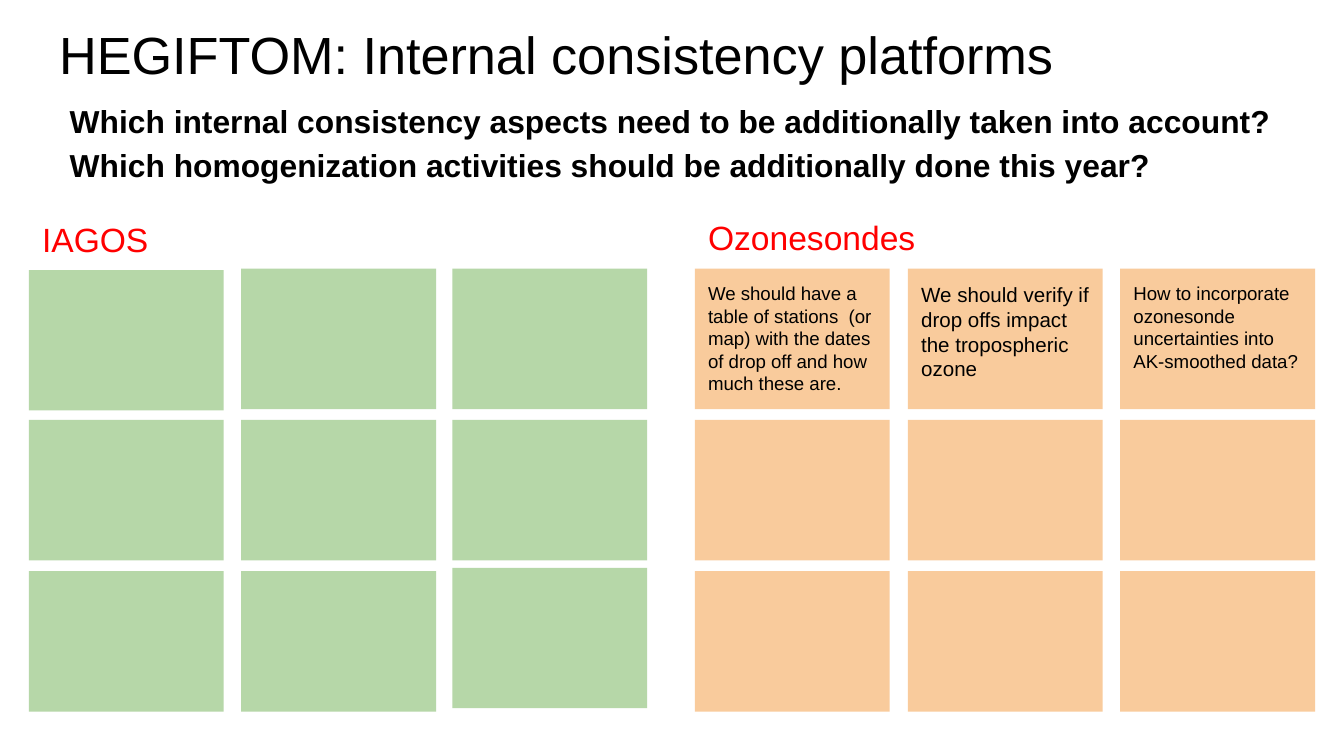
import dataclasses

import pptx
import pptx.dml.color
import pptx.enum.shapes
import pptx.enum.text
import pptx.util

EMU_PER_PX = 4572  # 200 px to the inch


@dataclasses.dataclass(frozen=True)
class Theme:
    font: str = "Arial"
    ink: str = "000000"
    heading: str = "FF0000"
    green: str = "B6D7A8"
    orange: str = "F9CB9C"
    title_size: int = 28
    question_size: int = 17
    heading_size: int = 18
    note_size: int = 10
    large_note_size: int = 11


THEME = Theme()
QUESTIONS = (
    "Which internal consistency aspects need to be additionally taken into account? "
    "Which homogenization activities should be additionally done this year?"
)
# Notes and text sizes by (row, column)
OZONE_NOTES = {
    (0, 0): ("We should have a table of stations  (or map) with the dates "
             "of drop off and how much these are.", THEME.note_size),
    (0, 1): ("We should verify if drop offs impact the tropospheric ozone",
             THEME.large_note_size),
    (0, 2): ("How to incorporate ozonesonde uncertainties into AK-smoothed data?",
             THEME.note_size),
}
CARD_WIDTH, CARD_HEIGHT = 290, 209
ROW_COUNT, ROW_PITCH = 3, 225
INSET = 20


def px(length):
    return pptx.util.Emu(length * EMU_PER_PX)


def colour(code):
    return pptx.dml.color.RGBColor.from_string(code)


def write(shape, text, size, ink=THEME.ink, bold=False, spacing=1.0):
    frame = shape.text_frame
    frame.word_wrap = True
    frame.auto_size = pptx.enum.text.MSO_AUTO_SIZE.NONE
    frame.vertical_anchor = pptx.enum.text.MSO_ANCHOR.TOP
    frame.margin_left = frame.margin_right = px(INSET)
    frame.margin_top = frame.margin_bottom = px(INSET)
    para = frame.paragraphs[0]
    para.alignment = pptx.enum.text.PP_ALIGN.LEFT
    para.line_spacing = spacing
    para.space_before = pptx.util.Pt(0)
    span = para.add_run()
    span.text = text
    span.font.name = THEME.font
    span.font.size = pptx.util.Pt(size)
    span.font.bold = bold
    span.font.color.rgb = colour(ink)


def add_text(page, left, top, width, height, text, size, **style):
    box = page.shapes.add_textbox(px(left), px(top), px(width), px(height))
    write(box, text, size, **style)


def add_header(page, left, top, width):
    # Title
    title = page.shapes.title
    title.left, title.top = px(left), px(top)
    title.width, title.height = px(width), px(126)
    write(title, "HEGIFTOM: Internal consistency platforms", THEME.title_size)
    # Questions under the title
    add_text(page, left + 16, top + 110, width, 94, QUESTIONS,
             THEME.question_size, bold=True, spacing=1.15)


def add_card(page, left, top, fill):
    card = page.shapes.add_shape(
        pptx.enum.shapes.MSO_SHAPE.RECTANGLE,
        px(left), px(top), px(CARD_WIDTH), px(CARD_HEIGHT))
    card.shadow.inherit = False
    card.fill.solid()
    card.fill.fore_color.rgb = colour(fill)
    card.line.fill.background()
    return card


def add_board(page, left, top, heading, fill, column_offsets,
              heading_rise, notes=None, nudges=None):
    """Heading above a three by three grid; nudges shift single cards down."""
    notes, nudges = notes or {}, nudges or {}
    add_text(page, left, top - heading_rise, 812, 94, heading,
             THEME.heading_size, ink=THEME.heading)
    for row in range(ROW_COUNT):
        for column, across in enumerate(column_offsets):
            cell = (row, column)
            card_top = top + row * ROW_PITCH + nudges.get(cell, 0)
            card = add_card(page, left + across, card_top, fill)
            if cell in notes:
                write(card, *notes[cell])


def main():
    deck = pptx.Presentation()
    deck.slide_width, deck.slide_height = px(2000), px(1125)
    page = deck.slides.add_slide(deck.slide_layouts[5])

    add_header(page, 68, 13, 1864)
    # Left board
    add_board(page, 43, 400, "IAGOS", THEME.green, (0, 316, 630),
              heading_rise=94, nudges={(0, 0): 2, (2, 2): -5})
    # Right board
    add_board(page, 1034, 400, "Ozonesondes", THEME.orange, (0, 317, 633),
              heading_rise=97, notes=OZONE_NOTES)

    deck.save("out.pptx")


if __name__ == "__main__":
    main()
